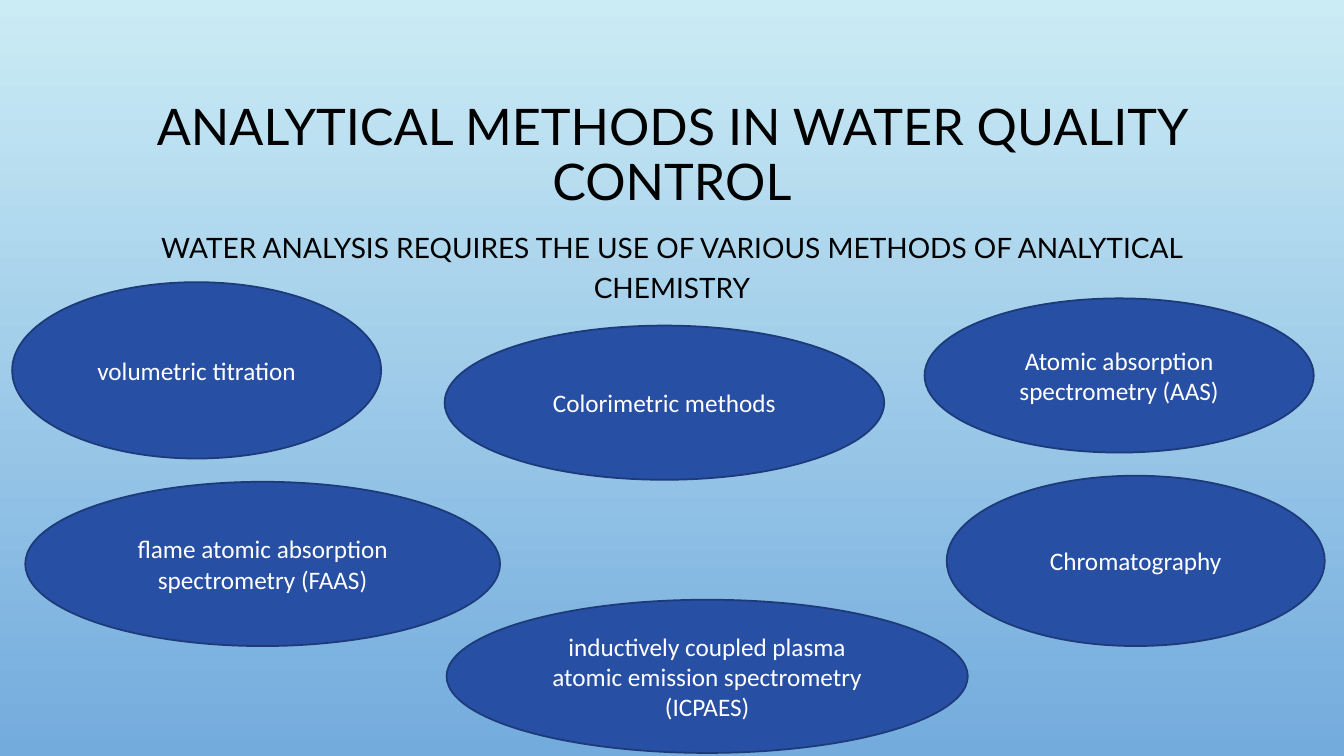
"""Builds the slide on analytical methods in water quality control."""
import pptx
import pptx.util
import pptx.dml.color
import pptx.enum.shapes
import pptx.enum.text
import lxml.etree

ALIGN = pptx.enum.text.PP_ALIGN
ANCHOR = pptx.enum.text.MSO_ANCHOR


def rgb(value):
    return pptx.dml.color.RGBColor.from_string(value)


def write(sp, text, anchor, color, para, font):
    tf = sp.text_frame
    tf.word_wrap = True
    tf.auto_size = pptx.enum.text.MSO_AUTO_SIZE.NONE
    tf.vertical_anchor = anchor
    p = tf.paragraphs[0]
    r = p.add_run()
    r.text = text
    for name, value in para.items():
        setattr(p, name, value)
    for name, value in font.items():
        setattr(r.font, name, value)
    r.font.color.rgb = rgb(color)


prs = pptx.Presentation()
prs.slide_width = pptx.util.Inches(13.33)
prs.slide_height = pptx.util.Inches(7.5)
W, H = prs.slide_width / 100, prs.slide_height / 100
s = prs.slides.add_slide(prs.slide_layouts[1])

bg = s.background.fill
bg.gradient()
bg.gradient_angle = 270
for stop, position, color in zip(bg.gradient_stops, (0, 1), ("CBECF5", "73ABDD")):
    stop.position = position
    stop.color.rgb = rgb(color)

headings = [
    (s.shapes.title, (7.5, 9.07, 85, 23.33), ANCHOR.MIDDLE, 0.9, 36,
     "ANALYTICAL METHODS IN WATER QUALITY CONTROL"),
    (s.placeholders[1], (7.5, 28.93, 85, 55.47), ANCHOR.TOP, 1.2, 20,
     "WATER ANALYSIS REQUIRES THE USE OF VARIOUS METHODS OF ANALYTICAL CHEMISTRY"),
]
for sp, (x, y, w, h), anchor, spacing, size, text in headings:
    box = {"left": x * W, "top": y * H, "width": w * W, "height": h * H}
    for name, value in box.items():
        setattr(sp, name, int(value))
    pPr = sp.text_frame.paragraphs[0]._p.get_or_add_pPr()
    pPr.set("marL", "0")
    pPr.set("indent", "0")
    lxml.etree.SubElement(pPr, pptx.oxml.ns.qn("a:buNone"))
    write(sp, text, anchor, "000000",
          {"alignment": ALIGN.CENTER, "line_spacing": spacing, "space_before": pptx.util.Pt(0)},
          {"name": "Lato", "size": pptx.util.Pt(size)})

methods = [
    ("volumetric titration", 0.9, 37.33, 27.46, 23.33),
    ("Colorimetric methods", 33.08, 43.07, 32.71, 20.4),
    ("Atomic absorption spectrometry (AAS)", 68.79, 39.47, 28.96, 20.4),
    ("flame atomic absorption spectrometry (FAAS)", 1.88, 63.73, 35.33, 21.73),
    ("inductively coupled plasma atomic emission spectrometry (ICPAES)",
     33.23, 79.33, 38.78, 20.27),
    ("Chromatography", 70.44, 62.93, 28.13, 22.53),
]
for text, x, y, w, h in methods:
    sp = s.shapes.add_shape(pptx.enum.shapes.MSO_SHAPE.OVAL,
                            int(x * W), int(y * H), int(w * W), int(h * H))
    sp.shadow.inherit = False
    sp.fill.solid()
    sp.fill.fore_color.rgb = rgb("274FA4")
    sp.line.color.rgb = rgb("1D3A79")
    sp.line.width = pptx.util.Pt(1.25)
    write(sp, text, ANCHOR.MIDDLE, "FFFFFF", {"alignment": ALIGN.CENTER},
          {"name": "Calibri", "size": pptx.util.Pt(18)})

prs.save("out.pptx")
